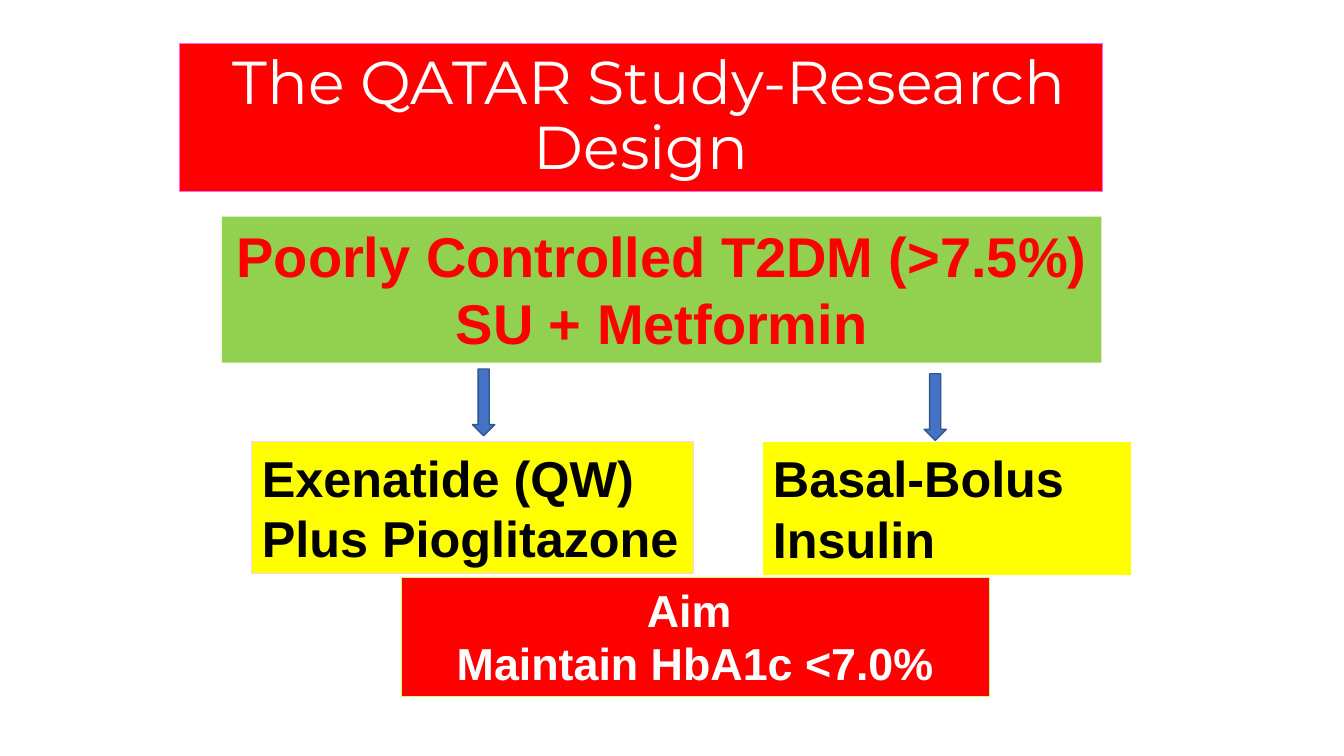
from pptx import Presentation
from pptx.dml.color import RGBColor
from pptx.enum.shapes import MSO_SHAPE
from pptx.enum.text import MSO_ANCHOR, MSO_AUTO_SIZE, PP_ALIGN
from pptx.util import Cm, Pt

LEFT, CENTER = PP_ALIGN.LEFT, PP_ALIGN.CENTER
TOP, MIDDLE = MSO_ANCHOR.TOP, MSO_ANCHOR.MIDDLE
FIXED = MSO_AUTO_SIZE.NONE
DOWN = MSO_SHAPE.DOWN_ARROW

RED, GREEN, YELLOW = "FF0000", "92D050", "FFFF00"
BLACK, WHITE = "000000", "FFFFFF"


def put(item, **values):
    for name, value in values.items():
        setattr(item, name, value)


def place(shape, spot):
    put(shape, **dict(zip(("left", "top", "width", "height"), map(Cm, spot))))


def tint(part, color):
    part.solid()
    part.fore_color.rgb = RGBColor.from_string(color)


def paint(shape, fill, line=None, width=0.75):
    tint(shape.fill, fill)
    if line:
        tint(shape.line.fill, line)
        shape.line.width = Pt(width)
    else:
        shape.line.fill.background()


def write(shape, lines, color, align, frame, font, gap=1.0):
    """Fill the shape with one paragraph per line."""
    body = shape.text_frame
    put(body, auto_size=FIXED, **frame)
    body.text = "\n".join(lines)
    for par in body.paragraphs:
        put(par, alignment=align, line_spacing=gap)
        for run in par.runs:
            put(run.font, **font)
            run.font.color.rgb = RGBColor.from_string(color)


def add_title(slide, text):
    title = slide.shapes.title
    place(title, (4.52, 1.09, 23.27, 3.73))
    paint(title, RED, "FF66FF")
    write(title, [text], WHITE, CENTER,
          {"word_wrap": True, "vertical_anchor": MIDDLE},
          {"name": "Montserrat", "size": Pt(43.2), "bold": False}, 0.9)


def add_box(slide, spot, lines, size, fill, line, color, align, wrap=True):
    box = slide.shapes.add_textbox(*map(Cm, spot))
    paint(box, fill, line)
    write(box, lines, color, align,
          {"word_wrap": wrap, "vertical_anchor": TOP},
          {"name": "Arial", "size": Pt(size), "bold": True})


def add_arrow(slide, left, top):
    arrow = slide.shapes.add_shape(DOWN, Cm(left), Cm(top), Cm(0.56), Cm(1.68))
    arrow.shadow.inherit = False
    paint(arrow, "4472C4", "325491", 1)


def main():
    deck = Presentation()
    put(deck, slide_width=Cm(33.87), slide_height=Cm(19.05))
    slide = deck.slides.add_slide(deck.slide_layouts[5])

    add_title(slide, " The QATAR Study-Research Design")
    add_box(slide, (5.59, 5.46, 22.17, 3.68),
            ["Poorly Controlled T2DM (>7.5%)", "SU + Metformin"],
            40, GREEN, None, RED, CENTER, False)
    add_box(slide, (6.35, 11.13, 11.13, 3.33),
            ["Exenatide (QW)", "Plus Pioglitazone"],
            36, YELLOW, "FFCCFF", BLACK, LEFT, False)
    add_box(slide, (19.23, 11.15, 9.25, 3.33), ["Basal-Bolus Insulin"],
            36, YELLOW, YELLOW, BLACK, LEFT)
    add_box(slide, (10.11, 14.55, 14.83, 3), ["Aim ", "Maintain HbA1c <7.0%"],
            32, RED, "CCFF66", WHITE, CENTER)
    for left, top in ((23.29, 9.42), (11.91, 9.3)):
        add_arrow(slide, left, top)

    deck.save("out.pptx")


if __name__ == "__main__":
    main()
